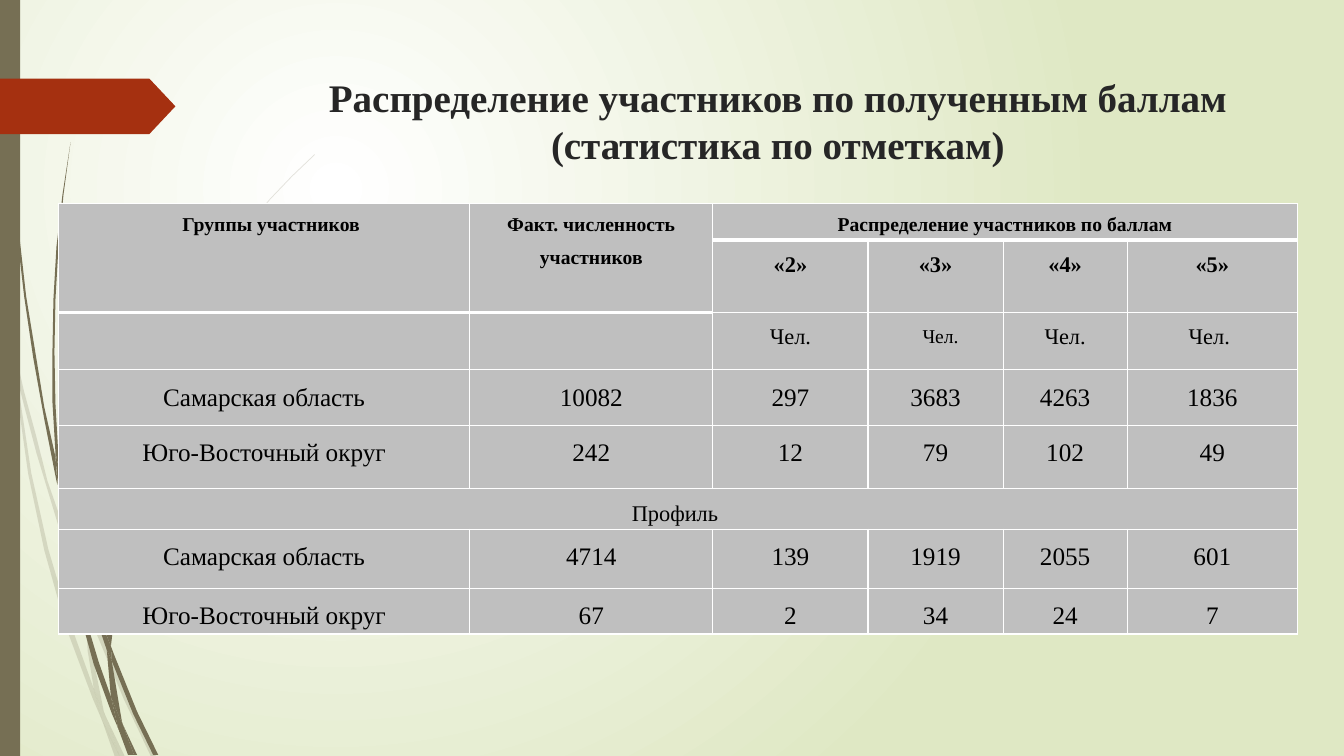
from dataclasses import dataclass

from lxml.etree import SubElement
from pptx import Presentation
from pptx.dml.color import RGBColor
from pptx.enum.shapes import MSO_SHAPE as Shape
from pptx.enum.text import MSO_ANCHOR as Anchor, PP_ALIGN as Align
from pptx.oxml.ns import qn
from pptx.util import Pt

PX = 9144  # 100 px to the inch


@dataclass(frozen=True)
class Theme:
    font: str = "Times New Roman"
    glow: RGBColor = RGBColor(0xFF, 0xFF, 0xFF)
    meadow: RGBColor = RGBColor(0xDF, 0xE8, 0xC4)
    grass: RGBColor = RGBColor(0x76, 0x6F, 0x54)
    arrow: RGBColor = RGBColor(0xA5, 0x30, 0x10)
    heading: RGBColor = RGBColor(0x26, 0x26, 0x26)
    cell: RGBColor = RGBColor(0xBF, 0xBF, 0xBF)
    ink: RGBColor = RGBColor(0, 0, 0)
    border: str = "FFFFFF"
    title_size: float = 27.9
    data_size: int = 18
    label_size: int = 16
    header_size: int = 14


theme = Theme()


def paint(shape, color, alpha=100):
    """Give a shape a plain fill, alpha in percent, with no line or shadow."""
    shape.shadow.inherit = False
    shape.line.fill.background()
    shape.fill.solid()
    shape.fill.fore_color.rgb = color
    if alpha < 100:
        tint = shape._element.spPr.find(".//" + qn("a:srgbClr"))
        SubElement(tint, qn("a:alpha"), val=str(alpha * 1000))


def style(paragraph, size, color, bold):
    paragraph.alignment = Align.CENTER
    font = paragraph.font
    font.name, font.size, font.bold = theme.font, Pt(size), bold
    font.color.rgb = color


deck = Presentation()
deck.slide_width, deck.slide_height = 1333 * PX, 750 * PX
slide = deck.slides.add_slide(deck.slide_layouts[6])

# Background: round glow centred in the upper left
backdrop = slide.background.fill
backdrop.gradient()
for stop, color in zip(backdrop.gradient_stops, (theme.glow, theme.meadow)):
    stop.color.rgb = color
gradient = slide._element.find(".//" + qn("a:gradFill"))
gradient.remove(gradient.find(qn("a:lin")))
glow = SubElement(gradient, qn("a:path"), {"path": "circle"})
SubElement(glow, qn("a:fillToRect"), l="50000", t="50000", r="100000", b="100000")

# Grass: outlines of the blade segments, grouped by opacity
faint_blades = [
    [(11, 350), (9, 322), (0, 282), (0, 299), (10, 344)],
    [(58, 522), (84, 599), (85, 586), (62, 520), (47, 477), (36, 433), (24, 389),
     (14, 345), (17, 376), (36, 449)],
    [(92, 607), (88, 596), (88, 610), (123, 694), (150, 751), (155, 751), (127, 692)],
    [(119, 751), (124, 751), (105, 711)],
    [(93, 683), (70, 619), (48, 545), (31, 469), (17, 376), (11, 350), (28, 470),
     (44, 546), (65, 621), (92, 693), (101, 714), (99, 707)],
    [(84, 599), (87, 646), (93, 683), (96, 692), (105, 711), (103, 706), (91, 646),
     (88, 610), (88, 608)],
    [(88, 584), (95, 522), (110, 462), (132, 404), (160, 349), (192, 296), (229, 245),
     (268, 198), (290, 175), (312, 154), (312, 153), (289, 175), (268, 197), (228, 244),
     (190, 295), (158, 348), (129, 403), (107, 461), (92, 522), (85, 584), (88, 596)],
    [(101, 714), (114, 751), (119, 751)],
    [(88, 608), (88, 596), (85, 586), (84, 599)],
    [(96, 692), (93, 683), (99, 707), (101, 714), (119, 751), (105, 711)],
]
dark_blades = [
    [(7, 110), (11, 172), (17, 233), (24, 294), (33, 355), (44, 416), (56, 477), (57, 481),
     (55, 453), (44, 404), (36, 355), (26, 294), (19, 232), (13, 171), (8, 109), (5, 48),
     (4, 0), (3, 0), (4, 48)],
    [(88, 592), (106, 645), (106, 631), (93, 590), (75, 532), (60, 472), (64, 505),
     (75, 549)],
    [(113, 649), (110, 641), (111, 656), (132, 708), (152, 749), (157, 749), (136, 706)],
    [(110, 691), (98, 657), (83, 607), (72, 556), (64, 505), (57, 477), (68, 557),
     (79, 608), (93, 659), (111, 708), (117, 722), (116, 717)],
    [(60, 472), (58, 453), (55, 401), (54, 349), (55, 297), (58, 245), (63, 193),
     (70, 141), (62, 193), (56, 245), (53, 297), (52, 349), (52, 399), (55, 449)],
    [(133, 749), (136, 749), (122, 719)],
    [(57, 477), (64, 505), (60, 472), (55, 449), (55, 453)],
    [(111, 633), (115, 592), (125, 552), (140, 513), (158, 476), (180, 440), (205, 406),
     (231, 374), (245, 359), (261, 344), (260, 344), (245, 358), (231, 373), (204, 405),
     (178, 439), (156, 474), (137, 512), (122, 551), (111, 591), (106, 631), (110, 641)],
    [(117, 722), (127, 749), (131, 749)],
    [(106, 645), (110, 691), (116, 706), (122, 719), (121, 716), (111, 656), (109, 651)],
    [(106, 645), (109, 651), (111, 656), (110, 641), (106, 631)],
    [(116, 706), (110, 691), (116, 717), (117, 722), (130, 749), (133, 749), (122, 719)],
]
for blades, alpha in ((faint_blades, 20), (dark_blades, 100)):
    for root, *outline in blades:
        builder = slide.shapes.build_freeform(*root, scale=PX)
        builder.add_line_segments(outline)
        paint(builder.convert_to_shape(), theme.grass, alpha)

# Side bar and arrow
side_bar = slide.shapes.add_shape(Shape.RECTANGLE, 0, 0, 20 * PX, 750 * PX)
paint(side_bar, theme.grass)
arrow = slide.shapes.add_shape(Shape.PENTAGON, 0, 78 * PX, 174 * PX, 55 * PX)
arrow.adjustments[0] = 0.47
paint(arrow, theme.arrow)

# Title
title = slide.shapes.add_textbox(284 * PX, 68 * PX, 975 * PX, 140 * PX).text_frame
title.word_wrap = True
title.vertical_anchor = Anchor.TOP
title.text = "Распределение участников по полученным баллам (статистика по отметкам)"
style(title.paragraphs[0], theme.title_size, theme.heading, True)

# Table of marks
column_widths = [408, 241, 154, 134, 123, 169]
row_heights = [36, 72, 57, 55, 63, 40, 59, 45]
rows = [
    ["Группы участников", "Факт. численность участников",
     "Распределение участников по баллам", "", "", ""],
    ["", "", "«2»", "«3»", "«4»", "«5»"],
    ["", "", "Чел.", "Чел.", "Чел.", "Чел."],
    ["Самарская область", "10082", "297", "3683", "4263", "1836"],
    ["Юго-Восточный округ", "242", "12", "79", "102", "49"],
    ["Профиль", "", "", "", "", ""],
    ["Самарская область", "4714", "139", "1919", "2055", "601"],
    ["Юго-Восточный округ", "67", "2", "34", "24", "7"],
]
row_sizes = [theme.header_size] + [theme.label_size] * 2 + [theme.data_size] * 5
row_sizes[5] = theme.label_size
small_cell = (2, 3)
first_line_indents = {(0, 0): 14, (0, 1): -8, small_cell: 10}
right_margins = {(2, 5): 6, (5, 0): 6}
merges = [((0, 0), (1, 0)), ((0, 1), (1, 1)), ((0, 2), (0, 5)), ((5, 0), (5, 5))]

marks = slide.shapes.add_table(len(rows), len(column_widths), 58 * PX, 202 * PX,
                               sum(column_widths) * PX, sum(row_heights) * PX).table
for column, width in zip(marks.columns, column_widths):
    column.width = width * PX
for row, height in zip(marks.rows, row_heights):
    row.height = height * PX

for r, texts in enumerate(rows):
    for c, text in enumerate(texts):
        cell = marks.cell(r, c)
        cell.margin_left = cell.margin_top = cell.margin_bottom = 0
        cell.margin_right = right_margins.get((r, c), 0) * PX
        header_rows = 2 if c < 2 else 1
        thick_sides = {"T": r == header_rows, "B": r < header_rows}
        for side in "LRTB":
            width = Pt(3 if thick_sides.get(side) else 1)
            edge = SubElement(cell._tc.get_or_add_tcPr(), qn("a:ln" + side), w=str(width))
            SubElement(SubElement(edge, qn("a:solidFill")), qn("a:srgbClr"), val=theme.border)
        cell.fill.solid()
        cell.fill.fore_color.rgb = theme.cell
        if text:
            cell.text = text
            paragraph = cell.text_frame.paragraphs[0]
            size = theme.header_size if (r, c) == small_cell else row_sizes[r]
            style(paragraph, size, theme.ink, r < 2)
            paragraph.line_spacing = 1.5
            if (r, c) in first_line_indents:
                layout = paragraph._p.get_or_add_pPr()
                layout.set("marL", "0")
                layout.set("indent", str(first_line_indents[r, c] * PX))

marks.cell(*small_cell).margin_top = 3 * PX
for first, last in merges:
    marks.cell(*first).merge(marks.cell(*last))

deck.save("out.pptx")
